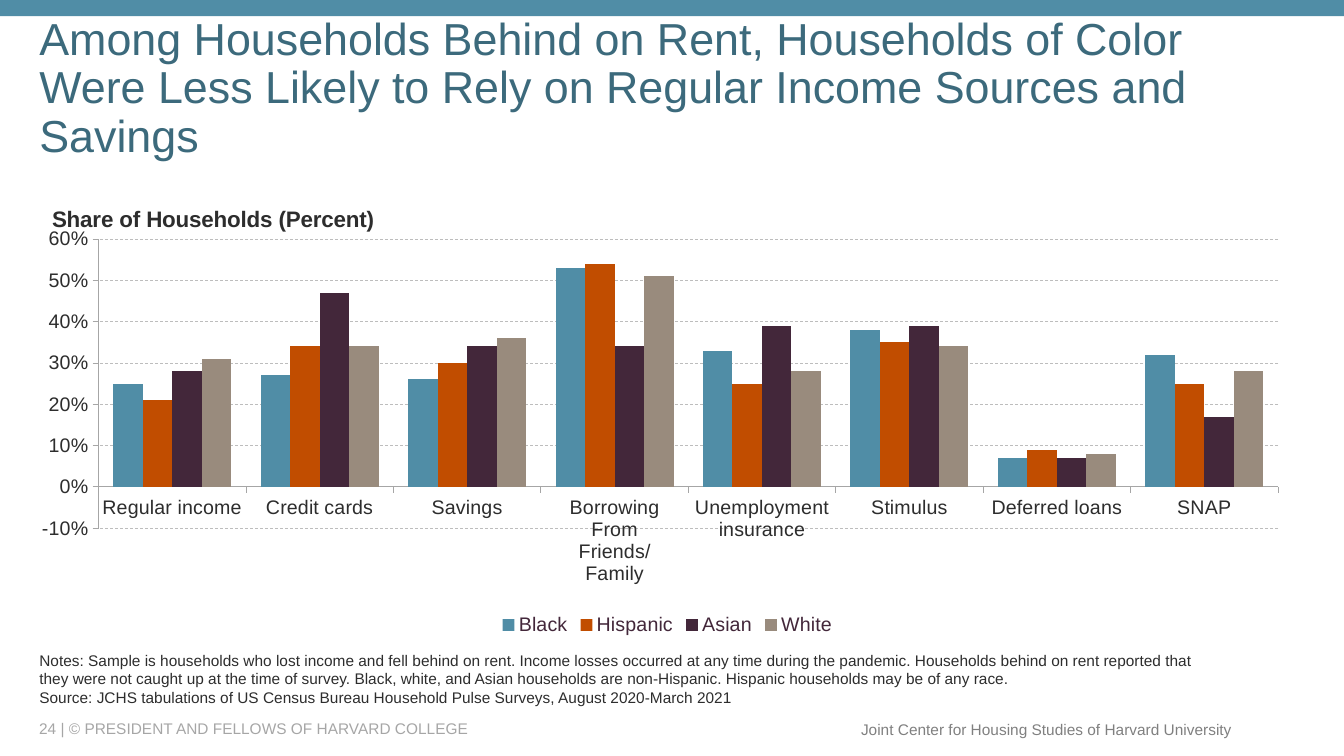
from dataclasses import dataclass

from lxml.etree import SubElement
from pptx import Presentation
from pptx.chart.chart import Chart
from pptx.chart.data import CategoryChartData
from pptx.dml.color import RGBColor
from pptx.enum.chart import XL_CHART_TYPE, XL_LEGEND_POSITION, XL_TICK_MARK
from pptx.enum.dml import MSO_LINE
from pptx.enum.shapes import MSO_SHAPE
from pptx.enum.text import MSO_ANCHOR, MSO_AUTO_SIZE, PP_ALIGN
from pptx.oxml import parse_xml
from pptx.oxml.ns import nsdecls, qn
from pptx.slide import Slide
from pptx.text.text import Font, TextFrame
from pptx.util import Inches, Pt


@dataclass(frozen=True)
class Theme:
    font: str = "Arial"
    teal: str = "508DA6"
    heading: str = "3C6A7C"
    ink: str = "2D2D2D"
    plum: str = "43273A"
    orange: str = "C14D00"
    taupe: str = "998B7D"
    axis: str = "A6A6A6"
    grid: str = "BDBDBD"
    credit: str = "808080"
    title_size: int = 32
    chart_title_size: int = 16
    chart_size: int = 14
    note_size: int = 11


@dataclass(frozen=True)
class Box:
    left: float
    top: float
    width: float
    height: float

    def lengths(self) -> tuple:
        return tuple(map(Inches, (self.left, self.top, self.width, self.height)))


@dataclass(frozen=True)
class Group:
    name: str
    color: str
    shares: tuple[float, ...]


@dataclass(frozen=True)
class FooterText:
    text: str
    box: Box
    color: str
    align: PP_ALIGN
    wrap: bool


THEME = Theme()

TITLE = ("Among Households Behind on Rent, Households of Color Were Less Likely "
         "to Rely on Regular Income Sources and Savings")
NOTES = (
    "Notes: Sample is households who lost income and fell behind on rent. Income losses "
    "occurred at any time during the pandemic. Households behind on rent reported that they "
    "were not caught up at the time of survey. Black, white, and Asian households are "
    "non-Hispanic. Hispanic households may be of any race.",
    "Source: JCHS tabulations of US Census Bureau Household Pulse Surveys, "
    "August 2020-March 2021",
)
FOOTERS = (
    FooterText("24 | © PRESIDENT AND FELLOWS OF HARVARD COLLEGE",
               Box(0.29, 7.13, 7.92, 0.2), THEME.axis, PP_ALIGN.LEFT, True),
    FooterText("Joint Center for Housing Studies of Harvard University",
               Box(8.42, 7.09, 3.9, 0.29), THEME.credit, PP_ALIGN.RIGHT, False),
)
INCOME_SOURCES = ("Regular income", "Credit cards", "Savings", "Borrowing From Friends/Family",
                  "Unemployment insurance", "Stimulus", "Deferred loans", "SNAP")
GROUPS = (
    Group("Black", THEME.teal, (0.25, 0.27, 0.26, 0.53, 0.33, 0.38, 0.07, 0.32)),
    Group("Hispanic", THEME.orange, (0.21, 0.34, 0.3, 0.54, 0.25, 0.35, 0.09, 0.25)),
    Group("Asian", THEME.plum, (0.28, 0.47, 0.34, 0.34, 0.39, 0.39, 0.07, 0.17)),
    Group("White", THEME.taupe, (0.31, 0.34, 0.36, 0.51, 0.28, 0.34, 0.08, 0.28)),
)


def style_font(font: Font, size: int, color: str, bold: bool = False) -> None:
    font.name = THEME.font
    font.size = Pt(size)
    font.bold = bold
    font.color.rgb = RGBColor.from_string(color)


def write(frame: TextFrame, texts: tuple[str, ...], size: int, color: str, anchor: MSO_ANCHOR,
          align: PP_ALIGN = PP_ALIGN.LEFT, spacing: float = 1.0, wrap: bool = True) -> None:
    """Fill a text frame with one unbulleted paragraph per text."""
    frame.auto_size = MSO_AUTO_SIZE.NONE
    frame.word_wrap = wrap
    frame.vertical_anchor = anchor
    for index, text in enumerate(texts):
        paragraph = frame.add_paragraph() if index else frame.paragraphs[0]
        properties = paragraph._p.get_or_add_pPr()
        properties.set("marL", "0")
        properties.set("indent", "0")
        SubElement(properties, qn("a:buNone"))
        paragraph.alignment = align
        paragraph.line_spacing = spacing
        paragraph.space_before = Pt(0)
        run = paragraph.add_run()
        run.text = text
        style_font(run.font, size, color)


def add_footer(slide: Slide, footer: FooterText) -> None:
    frame = slide.shapes.add_textbox(*footer.box.lengths()).text_frame
    write(frame, (footer.text,), THEME.note_size, footer.color, MSO_ANCHOR.MIDDLE,
          footer.align, wrap=footer.wrap)


def manual_layout(target: str, **fractions: float):
    """Build a c:layout placed by fractions of the chart area."""
    inner = '<c:layoutTarget val="inner"/>' if target == "inner" else ""
    modes = '<c:xMode val="edge"/><c:yMode val="edge"/>'
    values = "".join(f'<c:{key} val="{value}"/>' for key, value in fractions.items())
    return parse_xml(f'<c:layout {nsdecls("c")}><c:manualLayout>{inner}{modes}{values}'
                     "</c:manualLayout></c:layout>")


def place(element, layout, before: str) -> None:
    for old in element.findall(qn("c:layout")):
        element.remove(old)
    element.find(qn(before)).addprevious(layout)


def style_axes(chart: Chart) -> None:
    for axis in (chart.category_axis, chart.value_axis):
        style_font(axis.tick_labels.font, THEME.chart_size, THEME.ink)
        axis.major_tick_mark = XL_TICK_MARK.OUTSIDE
        axis.format.line.color.rgb = RGBColor.from_string(THEME.axis)
        axis.format.line.width = Pt(0.5)
    shares = chart.value_axis
    shares.minimum_scale, shares.maximum_scale, shares.major_unit = -0.1, 0.6, 0.1
    shares.tick_labels.number_format = "0%"
    shares.tick_labels.number_format_is_linked = False
    gridline = shares.major_gridlines.format.line
    gridline.color.rgb = RGBColor.from_string(THEME.grid)
    gridline.width = Pt(0.5)
    gridline.dash_style = MSO_LINE.DASH


def add_share_chart(slide: Slide, box: Box) -> None:
    data = CategoryChartData(number_format="0%")
    data.categories = INCOME_SOURCES
    for group in GROUPS:
        data.add_series(group.name, group.shares)
    chart = slide.shapes.add_chart(XL_CHART_TYPE.COLUMN_CLUSTERED, *box.lengths(), data).chart
    style_font(chart.font, THEME.chart_size, THEME.ink)

    heading = chart.chart_title.text_frame.paragraphs[0].add_run()
    heading.text = "Share of Households (Percent)"
    style_font(heading.font, THEME.chart_title_size, THEME.ink, bold=True)
    chart.chart_title.include_in_layout = False
    place(chart.chart_title._element, manual_layout("outer", x=0.01, y=0.03), "c:overlay")

    plot = chart.plots[0]
    plot.gap_width, plot.overlap, plot.vary_by_categories = 100, 0, False
    for series, group in zip(plot.series, GROUPS):
        series.format.fill.solid()
        series.format.fill.fore_color.rgb = RGBColor.from_string(group.color)
    place(chart._chartSpace.chart.plotArea,
          manual_layout("inner", x=0.05, y=0.114, w=0.933, h=0.639), "c:barChart")
    style_axes(chart)

    chart.has_legend = True
    chart.legend.position = XL_LEGEND_POSITION.BOTTOM
    chart.legend.include_in_layout = False
    style_font(chart.legend.font, THEME.chart_size, THEME.plum)


def main() -> None:
    deck = Presentation()
    deck.slide_width, deck.slide_height = Inches(13.33), Inches(7.5)
    slide = deck.slides.add_slide(deck.slide_layouts[1])

    band = slide.shapes.add_shape(MSO_SHAPE.RECTANGLE, *Box(0, 0, 13.33, 0.16).lengths())
    band.shadow.inherit = False
    band.fill.solid()
    band.fill.fore_color.rgb = RGBColor.from_string(THEME.teal)
    band.line.fill.background()

    title, notes = slide.shapes.title, slide.placeholders[1]
    for holder, box in ((title, Box(0.29, 0.4, 12.65, 0.97)), (notes, Box(0.29, 6.48, 11.75, 0.58))):
        holder.left, holder.top, holder.width, holder.height = box.lengths()
    write(title.text_frame, (TITLE,), THEME.title_size, THEME.heading, MSO_ANCHOR.MIDDLE, spacing=0.9)
    write(notes.text_frame, NOTES, THEME.note_size, THEME.ink, MSO_ANCHOR.BOTTOM)

    add_share_chart(slide, Box(0.35, 1.86, 12.54, 4.49))
    for footer in FOOTERS:
        add_footer(slide, footer)
    deck.save("out.pptx")


if __name__ == "__main__":
    main()
